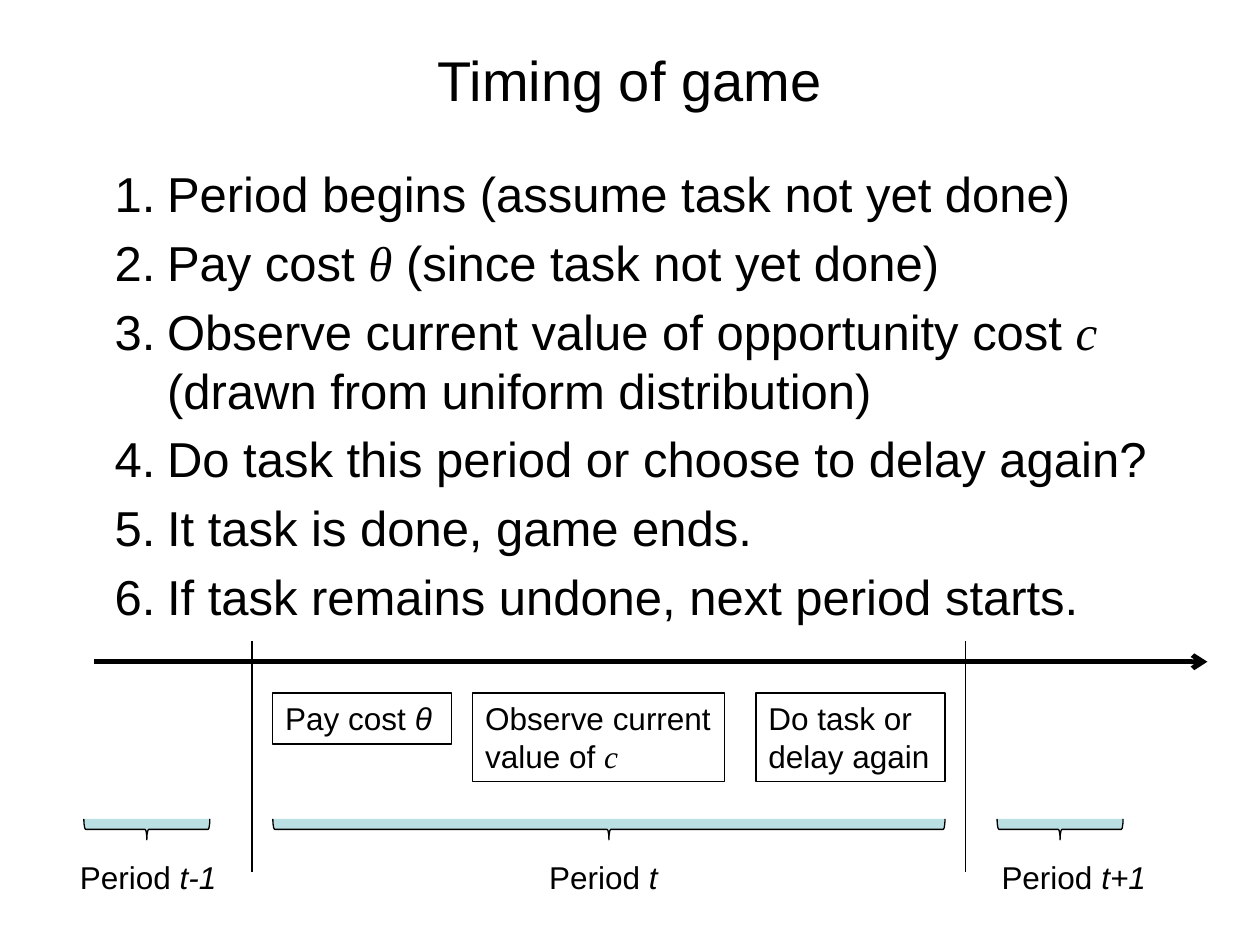
import pptx
import pptx.util
import pptx.dml.color
import pptx.enum.shapes
import pptx.enum.text
import pptx.oxml.ns
import lxml.etree

Cm, Pt = pptx.util.Cm, pptx.util.Pt
SHAPE = pptx.enum.shapes.MSO_SHAPE
ALIGN = pptx.enum.text.PP_ALIGN
ANCHOR = pptx.enum.text.MSO_ANCHOR
qn = pptx.oxml.ns.qn

COLORS = {"ink": "000000", "brace": "BBE0E3", "paper": "FFFFFF"}
SANS, SERIF = "Arial", "Times New Roman"


def rgb(name):
    return pptx.dml.color.RGBColor.from_string(COLORS[name])


class SlideBuilder:
    thin, thick = 0.75, 2.75
    label_size = 18

    def __init__(self, slide):
        self.s = slide
        slide.background.fill.solid()
        slide.background.fill.fore_color.rgb = rgb("paper")

    def add_runs(self, p, runs, size):
        """Each run is plain text or (italic text, font)."""
        for run in runs:
            text, font = (run, SANS) if isinstance(run, str) else run
            r = p.add_run()
            r.text = text
            r.font.name, r.font.size = font, Pt(size)
            r.font.italic = not isinstance(run, str)
            r.font.color.rgb = rgb("ink")

    def text(self, x, y, w, h, runs, size=label_size, align=ALIGN.LEFT,
             anchor=ANCHOR.TOP, wrap=True):
        sp = self.s.shapes.add_textbox(Cm(x), Cm(y), Cm(w), Cm(h))
        tf = sp.text_frame
        tf.word_wrap, tf.vertical_anchor = wrap, anchor
        p = tf.paragraphs[0]
        p.alignment = align
        self.add_runs(p, runs, size)
        return sp

    def numbered_list(self, x, y, w, h, items, size):
        tf = self.s.shapes.add_textbox(Cm(x), Cm(y), Cm(w), Cm(h)).text_frame
        tf.word_wrap = True
        for i, runs in enumerate(items):
            p = tf.add_paragraph() if i else tf.paragraphs[0]
            p.space_before = Pt(size * 0.2)
            pPr = p._p.get_or_add_pPr()
            pPr.set("marL", str(Cm(1.22)))
            pPr.set("indent", str(Cm(-1.06)))
            font = lxml.etree.SubElement(pPr, qn("a:buFont"))
            font.set("typeface", SANS)
            number = lxml.etree.SubElement(pPr, qn("a:buAutoNum"))
            number.set("type", "arabicPeriod")
            self.add_runs(p, runs, size)

    def boxed_text(self, x, y, w, h, runs):
        sp = self.text(x, y, w, h, runs)
        self.outline(sp.line, self.thin)

    def outline(self, line, width):
        line.color.rgb = rgb("ink")
        line.width = Pt(width)

    def line(self, x1, y1, x2, y2, width=thin, arrow=False):
        cxn = self.s.shapes.add_connector(
            pptx.enum.shapes.MSO_CONNECTOR.STRAIGHT,
            Cm(x1), Cm(y1), Cm(x2), Cm(y2))
        self.outline(cxn.line, width)
        if arrow:
            tail = lxml.etree.SubElement(cxn.line._get_or_add_ln(), qn("a:tailEnd"))
            tail.set("type", "arrow")
        lxml.etree.SubElement(cxn._element.spPr, qn("a:effectLst"))

    def brace_below(self, x, y, span, depth=0.42):
        """A right brace turned to point down, covering span from x."""
        sp = self.s.shapes.add_shape(
            SHAPE.RIGHT_BRACE, Cm(x + (span - depth) / 2),
            Cm(y + (depth - span) / 2), Cm(depth), Cm(span))
        sp.rotation = 90
        sp.adjustments[0] = 0.083
        sp.shadow.inherit = False
        sp.fill.solid()
        sp.fill.fore_color.rgb = rgb("brace")
        self.outline(sp.line, self.thin)


def main():
    prs = pptx.Presentation()
    prs.slide_width, prs.slide_height = Cm(25.4), Cm(19.05)
    b = SlideBuilder(prs.slides.add_slide(prs.slide_layouts[6]))

    b.text(1.9, 0, 21.59, 3.18, ["Timing of game"], 32,
           ALIGN.CENTER, ANCHOR.MIDDLE)
    b.numbered_list(1.9, 3.18, 22.22, 11.43, [
        ["Period begins (assume task not yet done)"],
        ["Pay cost ", ("θ", SERIF), " (since task not yet done)"],
        ["Observe current value of opportunity cost ", ("c", SERIF),
         " (drawn from uniform distribution)"],
        ["Do task this period or choose to delay again?"],
        ["It task is done, game ends."],
        ["If task remains undone, next period starts."],
    ], 28)

    b.line(1.9, 13.34, 24.34, 13.34, b.thick, arrow=True)
    for x in (5.08, 19.47):
        b.line(x, 17.58, x, 12.92)

    for x, w, h, runs in [
        (5.5, 3.6, 1.03, ["Pay cost ", ("θ", SANS)]),
        (9.53, 5.08, 1.79, ["Observe current value of ", ("c", SERIF)]),
        (15.24, 3.81, 1.79, ["Do task or delay again"]),
    ]:
        b.boxed_text(x, 13.97, w, h, runs)

    for brace_x, span, label_x, label_w, period in [
        (1.69, 2.54, 1.36, 3.3, "t-1"),
        (5.5, 13.55, 10.82, 2.72, "t"),
        (20.1, 2.54, 19.94, 3.45, "t+1"),
    ]:
        b.brace_below(brace_x, 16.51, span)
        b.text(label_x, 17.17, label_w, 1.03, ["Period ", (period, SANS)],
               wrap=False)

    prs.save("out.pptx")


if __name__ == "__main__":
    main()
